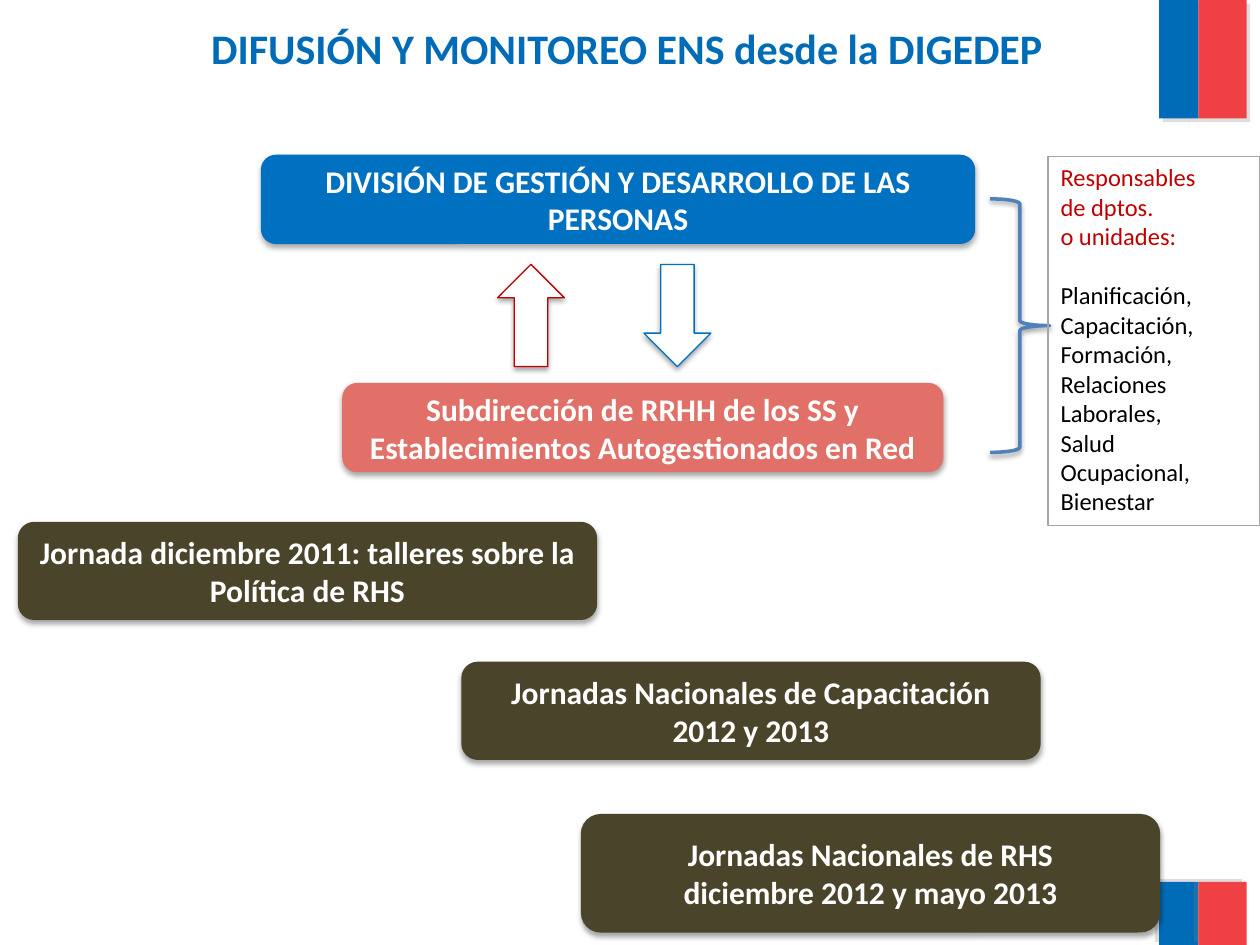
import lxml.etree
import pptx
import pptx.dml.color
import pptx.enum.shapes
import pptx.enum.text
import pptx.oxml.ns
import pptx.util

Cm = pptx.util.Cm
Pt = pptx.util.Pt
RGBColor = pptx.dml.color.RGBColor
Shape = pptx.enum.shapes.MSO_SHAPE
Align = pptx.enum.text.PP_ALIGN
Anchor = pptx.enum.text.MSO_ANCHOR
qn = pptx.oxml.ns.qn

FLAG_BLUE = RGBColor(0x00, 0x6C, 0xB7)
FLAG_RED = RGBColor(0xEF, 0x41, 0x44)
BLUE = RGBColor(0x00, 0x70, 0xC0)
CORAL = RGBColor(0xE1, 0x70, 0x68)
OLIVE = RGBColor(0x4A, 0x45, 0x2A)
DARK_RED = RGBColor(0xC0, 0x00, 0x00)
BRACE_BLUE = RGBColor(0x4F, 0x81, 0xBD)
GREY = RGBColor(0xA6, 0xA6, 0xA6)
SHADOW_GREY = RGBColor(0x80, 0x80, 0x80)
WHITE = RGBColor(0xFF, 0xFF, 0xFF)
BLACK = RGBColor(0x00, 0x00, 0x00)


class SlideBuilder:
    font_name = "Calibri"

    def __init__(self, slide):
        self.slide = slide

    def shape(self, kind, box, fill=None, line=None, line_width=0.75):
        """Add a preset shape without shadow; box is left, top, width, height in cm."""
        shape = self.slide.shapes.add_shape(kind, *map(Cm, box))
        shape.shadow.inherit = False
        if fill is None:
            shape.fill.background()
        else:
            shape.fill.solid()
            shape.fill.fore_color.rgb = fill
        if line is None:
            shape.line.fill.background()
        else:
            shape.line.color.rgb = line
            shape.line.width = Pt(line_width)
        return shape

    def cast_shadow(self, shape, color=BLACK, opacity=35, blur=3.1, distance=1.8, angle=90):
        effects = shape._element.spPr.find(qn("a:effectLst"))
        shadow = lxml.etree.SubElement(
            effects, qn("a:outerShdw"), blurRad=str(Pt(blur)), dist=str(Pt(distance)),
            dir=str(angle * 60000), algn="ctr", rotWithShape="0")
        shade = lxml.etree.SubElement(shadow, qn("a:srgbClr"), val=str(color))
        lxml.etree.SubElement(shade, qn("a:alpha"), val=str(opacity * 1000))

    def set_text(self, shape, lines, size, color, bold=False, align=Align.CENTER):
        frame = shape.text_frame
        frame.word_wrap = True
        frame.text = "\n".join(lines)
        for paragraph in frame.paragraphs:
            paragraph.alignment = align
            paragraph.font.name = self.font_name
            paragraph.font.size = Pt(size)
            paragraph.font.bold = bold
            paragraph.font.color.rgb = color
        return frame

    def flag(self, top, height, shadow_angle):
        for left, width, color in ((23.37, 0.79, FLAG_BLUE), (24.16, 0.97, FLAG_RED)):
            stripe = self.shape(Shape.RECTANGLE, (left, top, width, height), color)
            self.cast_shadow(stripe, SHADOW_GREY, 25, 0, 3, shadow_angle)

    def title(self, text, box):
        text_box = self.slide.shapes.add_textbox(*map(Cm, box))
        self.set_text(text_box, [text], 24, FLAG_BLUE, bold=True)

    def card(self, lines, box, color):
        card = self.shape(Shape.ROUNDED_RECTANGLE, box, color)
        self.cast_shadow(card)
        frame = self.set_text(card, lines, 18, WHITE, bold=True)
        frame.vertical_anchor = Anchor.MIDDLE

    def arrow(self, left, color, rotation=0):
        arrow = self.shape(Shape.UP_ARROW, (left, 5.33, 1.35, 2.06), WHITE, color)
        arrow.rotation = rotation
        self.cast_shadow(arrow)

    def brace(self, box):
        brace = self.shape(Shape.RIGHT_BRACE, box, line=BRACE_BLUE, line_width=2)
        self.cast_shadow(brace, opacity=38, distance=1.6)

    def side_list(self, heading, items, box):
        panel = self.shape(Shape.RECTANGLE, box, line=GREY)
        frame = self.set_text(panel, heading + items, 14, BLACK, align=Align.LEFT)
        frame.vertical_anchor = Anchor.TOP
        for paragraph in frame.paragraphs[:len(heading)]:
            paragraph.font.color.rgb = DARK_RED
        frame.paragraphs[len(heading)].space_before = Pt(17)


def main():
    presentation = pptx.Presentation()
    presentation.slide_width = Cm(25.4)
    presentation.slide_height = Cm(19.05)
    builder = SlideBuilder(presentation.slides.add_slide(presentation.slide_layouts[6]))

    builder.flag(0, 2.39, 45)
    builder.flag(17.78, 1.27, 215)
    builder.title("DIFUSIÓN Y MONITOREO ENS desde la DIGEDEP", (0.13, 0.33, 25.02, 1.27))

    builder.card(["DIVISIÓN DE GESTIÓN Y DESARROLLO DE LAS PERSONAS"],
                 (5.26, 3.12, 14.4, 1.8), BLUE)
    builder.card(["Subdirección de RRHH de los SS y Establecimientos Autogestionados en Red"],
                 (6.9, 7.72, 12.12, 1.8), CORAL)
    builder.arrow(10.03, DARK_RED)
    builder.arrow(12.98, BLUE, rotation=180)

    events = [
        (["Jornada diciembre 2011: talleres sobre la Política de RHS"], 0.36, 10.52, 1.98),
        (["Jornadas Nacionales de RHS", "diciembre 2012 y mayo 2013"], 11.71, 16.41, 2.39),
        (["Jornadas Nacionales de Capacitación", "2012 y 2013"], 9.3, 13.34, 1.98),
    ]
    for lines, left, top, height in events:
        builder.card(lines, (left, top, 11.68, height), OLIVE)

    builder.brace((19.96, 4.01, 1.2, 5.11))
    builder.side_list(
        ["Responsables", "de dptos.", "o unidades:"],
        ["Planificación,", "Capacitación,", "Formación,", "Relaciones", "Laborales,",
         "Salud Ocupacional,", "Bienestar"],
        (21.13, 3.15, 4.27, 7.44))

    presentation.save("out.pptx")


if __name__ == "__main__":
    main()
